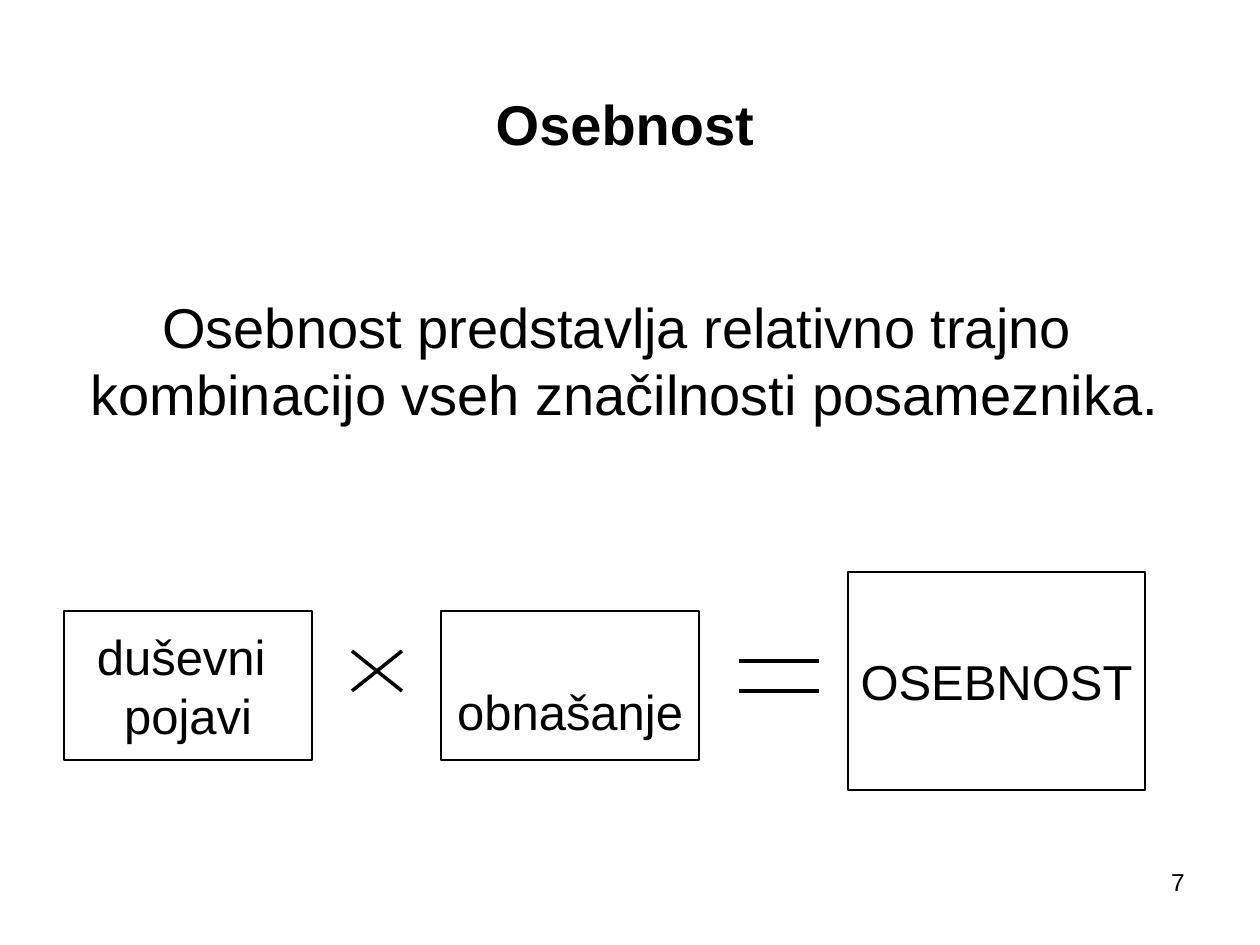
from pptx import Presentation
from pptx.dml.color import RGBColor
from pptx.enum.shapes import MSO_CONNECTOR, MSO_SHAPE
from pptx.enum.text import MSO_ANCHOR, MSO_AUTO_SIZE, PP_ALIGN
from pptx.oxml.ns import qn
from pptx.util import Emu, Pt
from lxml.etree import SubElement

PX_PER_INCH = 126
COLORS = {"ink": "000000", "paper": "FFFFFF"}
FONTS = {
    "heading": {"name": "Arial", "size": Pt(32), "bold": True},
    "definition": {"name": "Arial", "size": Pt(32), "bold": False},
    "term": {"name": "Arial", "size": Pt(28), "bold": False},
    "number": {"name": "Arial", "size": Pt(14), "bold": False},
}


def px(length):
    return Emu(round(length * 914400 / PX_PER_INCH))


def color(name):
    return RGBColor.from_string(COLORS[name])


def write_paragraphs(frame, lines, align):
    for index, (text, style) in enumerate(lines):
        para = frame.paragraphs[0] if index == 0 else frame.add_paragraph()
        para.alignment = align
        span = para.add_run()
        span.text = text
        for attribute, value in FONTS[style].items():
            setattr(span.font, attribute, value)
        span.font.color.rgb = color("ink")


def add_statement(page, left, top, width, height):
    title = page.shapes.title
    title.left, title.top = px(left), px(top)
    title.width, title.height = px(width), px(height)
    frame = title.text_frame
    frame.auto_size = MSO_AUTO_SIZE.NONE
    frame.vertical_anchor = MSO_ANCHOR.TOP
    frame.margin_top = px(54)
    lines = [
        ("Osebnost", "heading"),
        ("Osebnost predstavlja relativno trajno ", "definition"),
        ("kombinacijo vseh značilnosti posameznika.", "definition"),
    ]
    write_paragraphs(frame, lines, PP_ALIGN.CENTER)
    frame.paragraphs[0].space_after = Pt(78)
    for para in frame.paragraphs[1:]:
        para.space_before = Pt(0)


def add_term(page, left, top, width, height, words):
    box = page.shapes.add_shape(
        MSO_SHAPE.RECTANGLE, px(left), px(top), px(width), px(height))
    box.shadow.inherit = False
    box.fill.solid()
    box.fill.fore_color.rgb = color("paper")
    box.line.color.rgb = color("ink")
    box.line.width = Pt(0.75)
    frame = box.text_frame
    frame.word_wrap = False
    frame.vertical_anchor = MSO_ANCHOR.MIDDLE
    write_paragraphs(frame, [(word, "term") for word in words], PP_ALIGN.CENTER)
    return box


def add_stroke(page, x1, y1, x2, y2):
    stroke = page.shapes.add_connector(
        MSO_CONNECTOR.STRAIGHT, px(x1), px(y1), px(x2), px(y2))
    stroke.line.color.rgb = color("ink")
    stroke.line.width = Pt(2)
    SubElement(stroke._element.spPr, qn("a:effectLst"))


def add_times_sign(page, left, top, width, height):
    right, bottom = left + width, top + height
    add_stroke(page, left, bottom, right, top)
    add_stroke(page, left, top, right, bottom)


def add_equals_sign(page, left, top, width, height):
    for y in (top, top + height):
        add_stroke(page, left, y, left + width, y)


def add_equation(page, left, top, height):
    term_top, term_height = top + 39, 149
    add_term(page, left, term_top, 248, term_height, ["duševni ", "pojavi"])
    add_times_sign(page, left + 288, top + 79, 50, 40)
    behaviour = add_term(
        page, left + 377, term_top, 258, term_height, ["obnašanje"])
    behaviour.text_frame.vertical_anchor = MSO_ANCHOR.TOP
    behaviour.text_frame.margin_top = px(71)
    add_equals_sign(page, left + 675, top + 89, 80, 30)
    add_term(page, left + 784, top, 297, height, ["OSEBNOST"])


def add_page_number(page, left, top, width, height):
    box = page.shapes.add_textbox(px(left), px(top), px(width), px(height))
    box.text_frame.word_wrap = True
    write_paragraphs(box.text_frame, [("7", "number")], PP_ALIGN.RIGHT)


def main():
    deck = Presentation()
    deck.slide_width, deck.slide_height = px(1260), px(945)
    page = deck.slides.add_slide(deck.slide_layouts[5])
    page.background.fill.solid()
    page.background.fill.fore_color.rgb = color("paper")
    add_page_number(page, 903, 861, 294, 65)
    add_statement(page, 54, 35, 1142, 496)
    add_equation(page, 64, 572, 218)
    deck.save("out.pptx")


if __name__ == "__main__":
    main()
